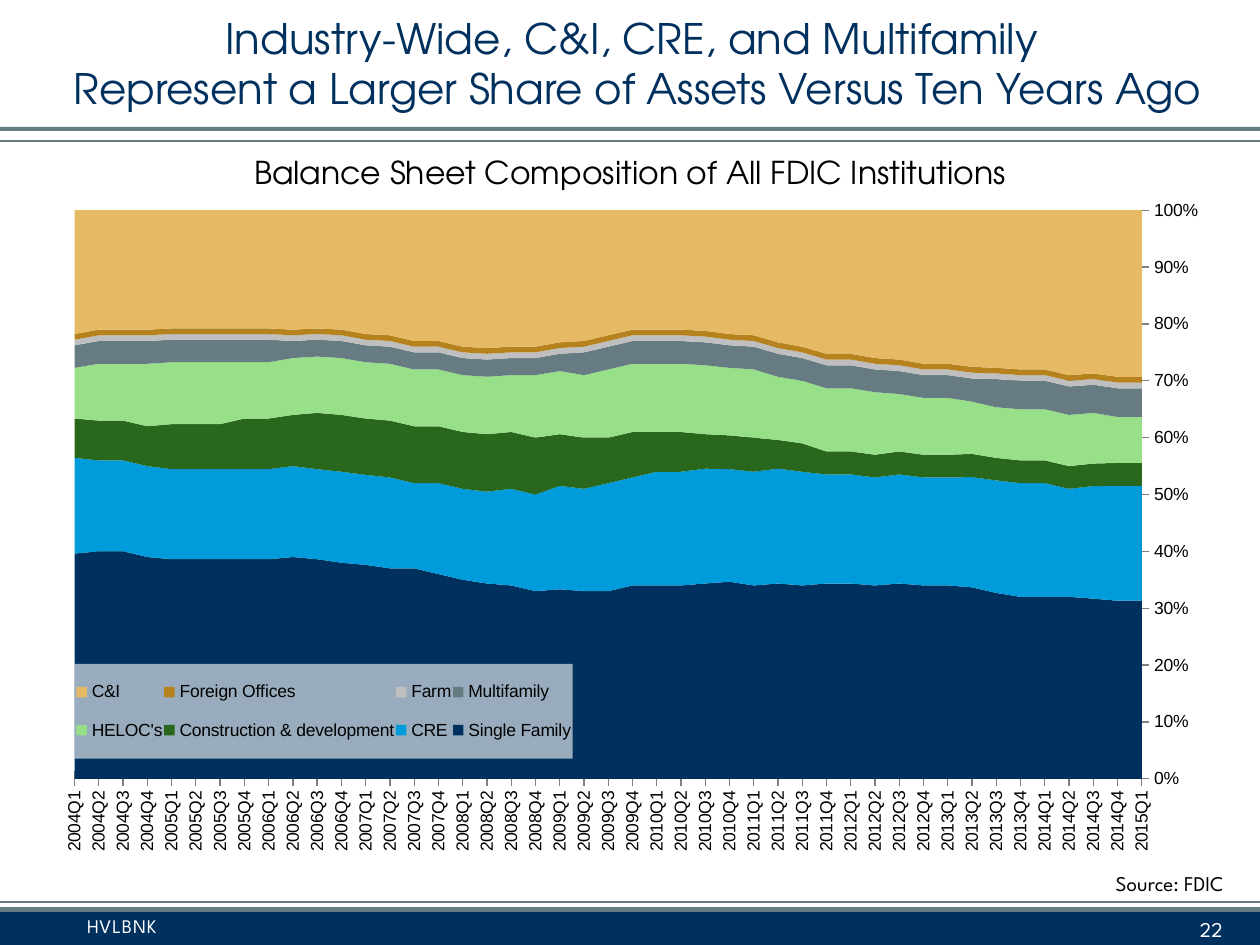
from lxml import etree
from pptx import Presentation
from pptx.chart.data import CategoryChartData
from pptx.dml.color import RGBColor
from pptx.enum.chart import XL_CHART_TYPE as ChartType, XL_LEGEND_POSITION as LegendPos, XL_TICK_MARK as TickMark
from pptx.enum.shapes import MSO_CONNECTOR as Connector, MSO_SHAPE as Shape
from pptx.enum.text import MSO_ANCHOR as Anchor, PP_ALIGN as Align
from pptx.oxml import parse_xml
from pptx.oxml.ns import nsdecls, qn
from pptx.util import Emu, Pt

PX = 914400 / 126
COLORS = {
    "navy": "00305E", "blue": "009BDA", "forest": "29671C", "mint": "97DF88",
    "slate": "667C82", "silver": "BFBFBF", "bronze": "B5821D", "sand": "E6BA64",
    "axis": "808080", "black": "000000", "white": "FFFFFF",
}
HEADING, LABEL, CHART = "TeX Gyre Adventor", "League Spartan", "Arial"

# Quarters run from newest to oldest; the axis is reversed
QUARTERS = [f"{2004 + n // 4}Q{n % 4 + 1}" for n in reversed(range(45))]
BALANCE_SHEET = [
    ("Single Family", "navy",
     [31, 31, 32, 32, 32, 32, 33, 33, 34, 34, 34, 34, 34, 34, 34, 34, 34, 35, 34, 34, 34, 34, 33,
      33, 33, 33, 34, 34, 35, 36, 37, 37, 38, 38, 39, 39, 39, 39, 39, 39, 39, 39, 40, 40, 40]),
    ("CRE", "blue",
     [20, 20, 20, 19, 20, 20, 20, 19, 19, 19, 19, 19, 19, 19, 20, 20, 20, 20, 20, 20, 20, 19, 19,
      18, 18, 17, 17, 16, 16, 16, 15, 16, 16, 16, 16, 16, 16, 16, 16, 16, 16, 16, 16, 16, 17]),
    ("Construction & development", "forest",
     [4] * 14 + [5, 5, 6, 6, 6, 7, 7, 8, 8, 9, 9] + [10] * 10
     + [9, 9, 9, 8, 8, 8, 7, 7, 7, 7]),
    ("HELOC's", "mint",
     [8, 8] + [9] * 6 + [10] * 3 + [11] * 5 + [12] * 7 + [11] * 3 + [10] * 12
     + [11] * 4 + [10, 10, 9]),
    ("Multifamily", "slate", [5] * 7 + [4] * 17 + [3] * 12 + [4] * 9),
    ("Farm", "silver", [1] * 45),
    ("Foreign Offices", "bronze", [1] * 45),
    ("C&I", "sand",
     [29, 29, 29, 29, 28, 28, 28, 27, 27, 27, 26, 26, 25, 25, 24, 23, 22, 22, 21, 21, 21, 21, 22,
      23, 23, 24, 24, 24, 24, 23, 23, 22, 22] + [21] * 11 + [22]),
]


def px(length):
    return Emu(round(length * PX))


def rgb(name):
    return RGBColor.from_string(COLORS[name])


def place(parent, index, x, y, w, h, inner=False):
    """Give a chart part a fixed place, as shares of the chart."""
    for old in parent.findall(qn("c:layout")):
        parent.remove(old)
    target = '<c:layoutTarget val="inner"/>' if inner else ""
    parent.insert(index, parse_xml(
        f'<c:layout {nsdecls("c")}><c:manualLayout>{target}'
        '<c:xMode val="edge"/><c:yMode val="edge"/>'
        f'<c:x val="{x}"/><c:y val="{y}"/><c:w val="{w}"/><c:h val="{h}"/>'
        '</c:manualLayout></c:layout>'))


class SlideBuilder:
    def __init__(self, slide):
        self.slide = slide
        self.shapes = slide.shapes

    def bar(self, x, y, w, h, color):
        bar = self.shapes.add_shape(Shape.RECTANGLE, px(x), px(y), px(w), px(h))
        bar.shadow.inherit = False
        bar.fill.solid()
        bar.fill.fore_color.rgb = rgb(color)
        bar.line.fill.background()

    def rule(self, y, width):
        rule = self.shapes.add_connector(Connector.STRAIGHT, 0, px(y), px(1260), px(y))
        rule.line.color.rgb = rgb("slate")
        rule.line.width = Pt(width)
        etree.SubElement(rule._element.spPr, qn("a:effectLst"))

    def text(self, x, y, w, h, words, font, size, color, align=Align.LEFT,
             anchor=Anchor.MIDDLE, tab=None, spacing=None, left=None, top=None):
        frame = self.shapes.add_textbox(px(x), px(y), px(w), px(h)).text_frame
        frame.word_wrap = True
        frame.vertical_anchor = anchor
        if left is not None:
            frame.margin_left = px(left)
        if top is not None:
            frame.margin_top = px(top)
        paragraph = frame.paragraphs[0]
        paragraph.text = words
        paragraph.alignment = align
        if tab:
            tabs = etree.SubElement(paragraph._p.get_or_add_pPr(), qn("a:tabLst"))
            etree.SubElement(tabs, qn("a:tab"), pos=str(px(tab)), algn="l")
        paragraph.font.name = font
        paragraph.font.size = Pt(size)
        paragraph.font.color.rgb = rgb(color)
        if spacing:
            for run in paragraph.runs:
                run._r.get_or_add_rPr().set("spc", str(spacing))

    def area_chart(self, x, y, w, h, categories, series):
        data = CategoryChartData(number_format="#,##0")
        data.categories = categories
        for name, _, values in series:
            data.add_series(name, values)
        chart = self.shapes.add_chart(
            ChartType.AREA_STACKED_100, px(x), px(y), px(w), px(h), data).chart
        chart.has_title = False
        chart.font.name = CHART
        chart.font.size = Pt(10)
        chart.font.color.rgb = rgb("black")
        plot = chart.plots[0]
        plot.vary_by_categories = False
        for area, (_, color, _) in zip(plot.series, series):
            area.format.fill.solid()
            area.format.fill.fore_color.rgb = rgb(color)
        place(chart._chartSpace.chart.plotArea, 0, 0.03, 0.03, 0.9, 0.84, inner=True)
        self.style_axes(chart)
        self.style_legend(chart)

    def style_axes(self, chart):
        quarters, shares = chart.category_axis, chart.value_axis
        for axis in (quarters, shares):
            axis.major_tick_mark = TickMark.CROSS
            axis.minor_tick_mark = TickMark.NONE
            axis.format.line.color.rgb = rgb("axis")
            axis.tick_labels.font.size = Pt(10)
        quarters.reverse_order = True
        quarters.has_major_gridlines = False
        quarters._element.txPr.find(qn("a:bodyPr")).set("rot", "-5400000")
        shares.has_major_gridlines = True
        shares.major_gridlines.format.line.color.rgb = rgb("axis")
        shares.minimum_scale, shares.maximum_scale, shares.major_unit = 0, 1, 0.1
        shares.tick_labels.number_format = "0%"
        shares.tick_labels.number_format_is_linked = False

    def style_legend(self, chart):
        chart.has_legend = True
        legend = chart.legend
        legend.position = LegendPos.LEFT
        legend.include_in_layout = True
        legend.font.size = Pt(10)
        place(legend._element, 1, 0.03, 0.7, 0.42, 0.14)
        legend._element.find(qn("c:overlay")).addnext(parse_xml(
            f'<c:spPr {nsdecls("c", "a")}><a:solidFill><a:srgbClr val="{COLORS["white"]}">'
            '<a:alpha val="60000"/></a:srgbClr></a:solidFill></c:spPr>'))


def main():
    deck = Presentation()
    deck.slide_width, deck.slide_height = px(1260), px(945)
    page = SlideBuilder(deck.slides.add_slide(deck.slide_layouts[6]))

    # Header and footer bands
    page.bar(0, 907, 1260, 5, "slate")
    page.rule(902, 1)
    page.bar(0, 912, 1260, 33, "navy")
    page.rule(141, 0.75)
    page.bar(0, 127, 1260, 4, "slate")
    page.text(0, 908, 924, 37, "\tHVLBNK", LABEL, 11, "white",
              anchor=Anchor.TOP, tab=87, spacing=50, left=0)

    # Title, source and page number
    page.text(15, 0, 1245, 126,
              "Industry-Wide, C&I, CRE, and Multifamily \v"
              "Represent a Larger Share of Assets Versus Ten Years Ago",
              HEADING, 24, "navy", Align.CENTER)
    page.text(837, 867, 399, 33, "Source: FDIC", LABEL, 12, "black", Align.RIGHT)
    page.text(941, 912, 294, 33, "22", LABEL, 12, "white", Align.RIGHT, top=8)

    # Balance sheet chart
    page.text(0, 140, 1260, 63, "Balance Sheet Composition of All FDIC Institutions",
              HEADING, 18, "black", Align.CENTER)
    page.area_chart(39, 190, 1186, 677, QUARTERS, BALANCE_SHEET)

    deck.save("out.pptx")


if __name__ == "__main__":
    main()
